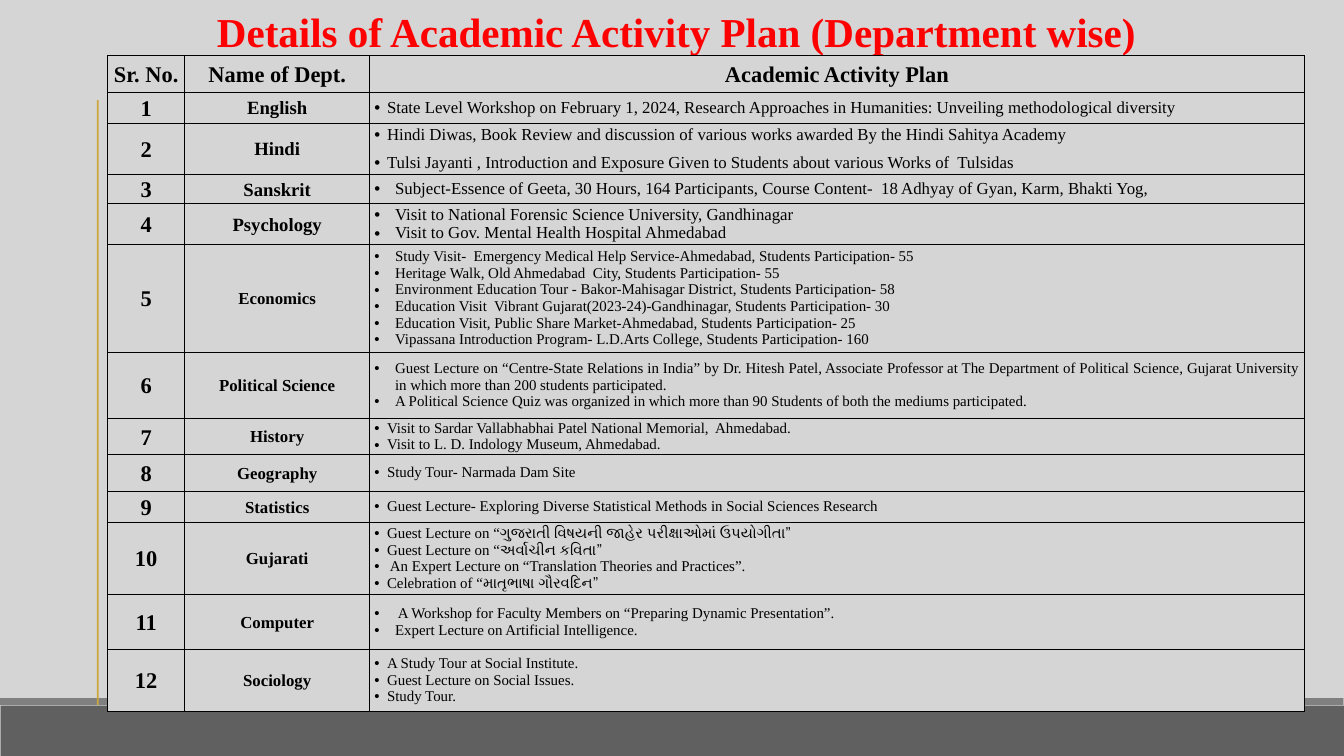
"""Build the department-wise academic activity plan slide."""
from lxml import etree
from pptx import Presentation
from pptx.dml.color import RGBColor
from pptx.enum.shapes import MSO_SHAPE
from pptx.enum.text import MSO_ANCHOR, PP_ALIGN
from pptx.oxml.ns import qn
from pptx.util import Pt

RECT = MSO_SHAPE.RECTANGLE
MIDDLE = MSO_ANCHOR.MIDDLE
LEFT, CENTER, JUSTIFY = PP_ALIGN.LEFT, PP_ALIGN.CENTER, PP_ALIGN.JUSTIFY

PX = 9144
FONT = "Times New Roman"
COLORS = {"page": "D5D5D5", "floor": "606060", "edge": "808080",
          "accent": "CDA63C", "title": "FF0000", "text": "000000"}

TITLE = "Details of Academic Activity Plan (Department wise) "
TITLE_BOX = (234, 5, 1562, 84)
BARS = [
    ("floor", (1, 1050, 1999, 75)),
    ("edge", (0, 1039, 1999, 10)),
    ("accent", (144, 149, 3, 900)),
]
TABLE_AT = (160, 83)
COLUMNS = [("Sr. No.", 115), ("Name of Dept.", 275), ("Academic Activity Plan", 1391)]
HEADER_HEIGHT = 55
NARROW, WIDE = 19, 31

# height, department, its size, plan size, indent, alignment, space before, plans
DEPARTMENTS = [
    (45, "English", 20, 18, NARROW, LEFT, 10, [
        "State Level Workshop on February 1, 2024, Research Approaches in Humanities: "
        "Unveiling methodological diversity"]),
    (77, "Hindi", 20, 18, NARROW, LEFT, 10, [
        "Hindi Diwas, Book Review and discussion of various works awarded By the Hindi Sahitya Academy",
        "Tulsi Jayanti , Introduction and Exposure Given to Students about various Works of  Tulsidas"]),
    (42, "Sanskrit", 20, 18, WIDE, LEFT, 0, [
        "Subject-Essence of Geeta, 30 Hours, 164 Participants, Course Content-  "
        "18 Adhyay of Gyan, Karm, Bhakti Yog,"]),
    (61, "Psychology", 20, 18, WIDE, LEFT, 0, [
        "Visit to National Forensic Science University, Gandhinagar",
        "Visit to Gov. Mental Health Hospital Ahmedabad"]),
    (159, "Economics", 18, 16, WIDE, LEFT, 0, [
        "Study Visit-  Emergency Medical Help Service-Ahmedabad, Students Participation- 55",
        "Heritage Walk, Old Ahmedabad  City, Students Participation- 55",
        "Environment Education Tour - Bakor-Mahisagar District, Students Participation- 58",
        "Education Visit  Vibrant Gujarat(2023-24)-Gandhinagar, Students Participation- 30",
        "Education Visit, Public Share Market-Ahmedabad, Students Participation- 25",
        "Vipassana Introduction Program- L.D.Arts College, Students Participation- 160"]),
    (99, "Political Science", 18, 16, WIDE, JUSTIFY, 0, [
        "Guest Lecture on “Centre-State Relations in India” by Dr. Hitesh Patel, Associate Professor "
        "at The Department of Political Science, Gujarat University in which more than 200 students "
        "participated.",
        "A Political Science Quiz was organized in which more than 90 Students of both the mediums "
        "participated."]),
    (54, "History", 18, 16, NARROW, JUSTIFY, 0, [
        "Visit to Sardar Vallabhabhai Patel National Memorial,  Ahmedabad.",
        "Visit to L. D. Indology Museum, Ahmedabad."]),
    (54, "Geography", 18, 16, NARROW, JUSTIFY, 0, ["Study Tour- Narmada Dam Site"]),
    (47, "Statistics", 18, 16, NARROW, JUSTIFY, 0, [
        "Guest Lecture- Exploring Diverse Statistical Methods in Social Sciences Research"]),
    (106, "Gujarati", 18, 16, NARROW, LEFT, 0, [
        "Guest Lecture on “ગુજરાતી વિષયની જાહેર પરીક્ષાઓમાં ઉપયોગીતા”",
        "Guest Lecture on “અર્વાચીન કવિતા”",
        " An Expert Lecture on “Translation Theories and Practices”.",
        "Celebration of “માતૃભાષા ગૌરવદિન”"]),
    (82, "Computer", 18, 16, WIDE, LEFT, 0, [
        " A Workshop for Faculty Members on “Preparing Dynamic Presentation”.",
        "Expert Lecture on Artificial Intelligence."]),
    (92, "Sociology", 18, 16, NARROW, JUSTIFY, 0, [
        "A Study Tour at Social Institute.",
        "Guest Lecture on Social Issues.",
        "Study Tour."]),
]


def rgb(name):
    return RGBColor.from_string(COLORS[name])


def box(px):
    return [v * PX for v in px]


def write(p, text, size, color="text", bold=True, **layout):
    for name, value in layout.items():
        setattr(p, name, value)
    r = p.add_run()
    r.text = text
    for name, value in {"name": FONT, "size": Pt(size), "bold": bold}.items():
        setattr(r.font, name, value)
    r.font.color.rgb = rgb(color)


def add_bullet(p, indent):
    pPr = p._p.get_or_add_pPr()
    pPr.set("marL", str(indent * PX))
    pPr.set("indent", str(-indent * PX))
    etree.SubElement(pPr, qn("a:buFont"), typeface="Arial")
    etree.SubElement(pPr, qn("a:buChar"), char="•")


def style_cell(cell):
    margins = {"margin_left": 7, "margin_right": 7, "margin_top": 0, "margin_bottom": 0}
    for name, value in margins.items():
        setattr(cell, name, value * PX)
    cell.vertical_anchor = MIDDLE
    tcPr = cell._tc.get_or_add_tcPr()
    for side in ("a:lnL", "a:lnR", "a:lnT", "a:lnB"):
        ln = etree.SubElement(tcPr, qn(side), w=str(Pt(1)))
        fill = etree.SubElement(ln, qn("a:solidFill"))
        etree.SubElement(fill, qn("a:srgbClr"), val=COLORS["text"])
    cell.fill.solid()
    cell.fill.fore_color.rgb = rgb("page")


def write_label(cell, text, size):
    write(cell.text_frame.paragraphs[0], text, size, alignment=CENTER, line_spacing=1.07)


def write_plans(cell, plans, size, indent, align, before):
    tf = cell.text_frame
    for i, plan in enumerate(plans):
        p = tf.add_paragraph() if i else tf.paragraphs[0]
        write(p, plan, size, bold=False, alignment=align, space_before=Pt(before))
        add_bullet(p, indent)


def add_plan_table(slide):
    heights = [HEADER_HEIGHT] + [d[0] for d in DEPARTMENTS]
    widths = [w for _, w in COLUMNS]
    at = box((*TABLE_AT, sum(widths), sum(heights)))
    table = slide.shapes.add_table(len(heights), len(widths), *at).table
    for col, width in zip(table.columns, widths):
        col.width = width * PX
    for row, height in zip(table.rows, heights):
        row.height = height * PX
    for cell in table.iter_cells():
        style_cell(cell)
    for c, (heading, _) in enumerate(COLUMNS):
        write_label(table.cell(0, c), heading, 24)
    for n, (_, dept, dept_size, size, indent, align, before, plans) in enumerate(DEPARTMENTS, 1):
        write_label(table.cell(n, 0), str(n), 24)
        write_label(table.cell(n, 1), dept, dept_size)
        write_plans(table.cell(n, 2), plans, size, indent, align, before)


def main():
    prs = Presentation()
    prs.slide_width, prs.slide_height = box((2000, 1125))
    slide = prs.slides.add_slide(prs.slide_layouts[6])
    slide.background.fill.solid()
    slide.background.fill.fore_color.rgb = rgb("page")
    for color, at in BARS:
        sp = slide.shapes.add_shape(RECT, *box(at))
        sp.shadow.inherit = False
        sp.fill.solid()
        sp.fill.fore_color.rgb = rgb(color)
        sp.line.fill.background()
    tf = slide.shapes.add_textbox(*box(TITLE_BOX)).text_frame
    tf.word_wrap = True
    write(tf.paragraphs[0], TITLE, 44, "title", alignment=CENTER)
    add_plan_table(slide)
    prs.save("out.pptx")


if __name__ == "__main__":
    main()
